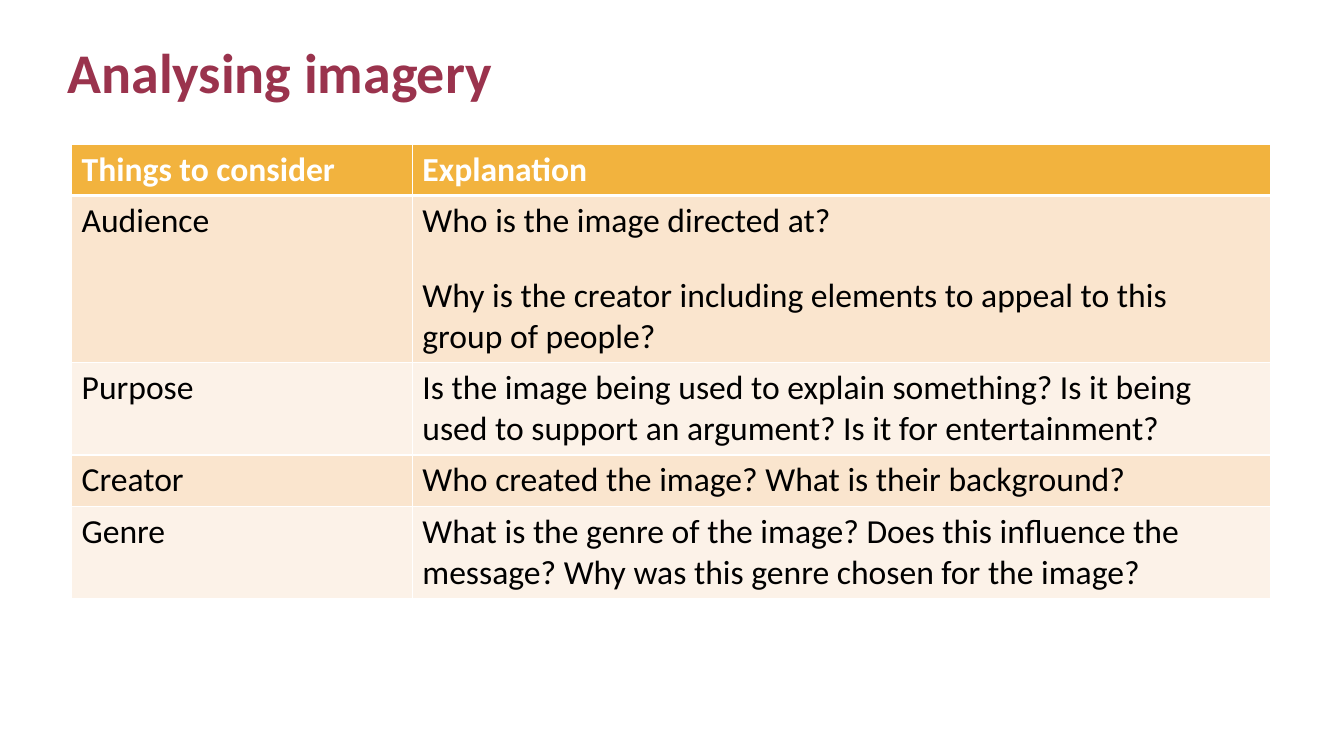
from dataclasses import dataclass

from lxml import etree
from pptx import Presentation
from pptx.dml.color import RGBColor
from pptx.enum.text import MSO_ANCHOR, MSO_AUTO_SIZE, PP_ALIGN
from pptx.oxml.ns import qn
from pptx.table import _Cell
from pptx.text.text import TextFrame
from pptx.util import Inches, Pt

TOP = MSO_ANCHOR.TOP
NO_AUTOFIT = MSO_AUTO_SIZE.NONE
LEFT = PP_ALIGN.LEFT
TITLE_ONLY = 5
FONT = "Calibri"
WHITE, BLACK, CRIMSON, AMBER = "FFFFFF", "000000", "9A334D", "F2B33E"
BANDS = ("FAE5CE", "FCF2E8")
COLUMN_WIDTHS = (3.38, 8.51)


@dataclass(frozen=True)
class Consideration:
    topic: str
    explanation: tuple[str, ...]
    height: float


HEADER = Consideration("Things to consider", ("Explanation",), 0.51)
CONSIDERATIONS = (
    Consideration("Audience", (
        "Who is the image directed at?",
        "Why is the creator including elements to appeal to this\vgroup of people?",
    ), 1.65),
    Consideration("Purpose", (
        "Is the image being used to explain something? Is it being used to "
        "support an argument? Is it for entertainment?",
    ), 0.92),
    Consideration("Creator", ("Who created the image? What is their background?",), 0.51),
    Consideration("Genre", (
        "What is the genre of the image? Does this influence the message? "
        "Why was this genre chosen for the image?",
    ), 0.92),
)


def rgb(value: str) -> RGBColor:
    return RGBColor.from_string(value)


def write(frame: TextFrame, *texts: str, size: float = 24, color: str = BLACK,
          bold: bool = False, gap: float = 24, line_spacing: float = 1.0) -> None:
    frame.word_wrap = True
    for index, text in enumerate(texts):
        paragraph = frame.add_paragraph() if index else frame.paragraphs[0]
        paragraph.text = text
        paragraph.alignment = LEFT
        paragraph.line_spacing = line_spacing
        paragraph.space_before = Pt(gap if index else 0)
        for run in paragraph.runs:
            run.font.name = FONT
            run.font.size = Pt(size)
            run.font.bold = bold
            run.font.color.rgb = rgb(color)


def add_borders(cell: _Cell, top: float, bottom: float) -> None:
    properties = cell._tc.get_or_add_tcPr()
    for side, width in (("L", 1), ("R", 1), ("T", top), ("B", bottom)):
        border = etree.SubElement(properties, qn(f"a:ln{side}"), w=str(Pt(width)))
        fill = etree.SubElement(border, qn("a:solidFill"))
        etree.SubElement(fill, qn("a:srgbClr"), val=WHITE)


def fill_cell(cell: _Cell, row: int, texts: tuple[str, ...]) -> None:
    is_header = row == 0
    add_borders(cell, top=3 if row == 1 else 1, bottom=3 if is_header else 1)
    cell.fill.solid()
    cell.fill.fore_color.rgb = rgb(AMBER if is_header else BANDS[(row - 1) % 2])
    write(cell.text_frame, *texts, color=WHITE if is_header else BLACK, bold=is_header)


def main() -> None:
    """Build the slide on analysing imagery and save it."""
    presentation = Presentation()
    presentation.slide_width = Inches(13.33)
    presentation.slide_height = Inches(7.5)
    slide = presentation.slides.add_slide(presentation.slide_layouts[TITLE_ONLY])

    title = slide.shapes.title
    title.left, title.top = Inches(0.57), Inches(0.4)
    title.width, title.height = Inches(11.5), Inches(1.45)
    title.text_frame.auto_size = NO_AUTOFIT
    title.text_frame.vertical_anchor = TOP
    write(title.text_frame, "Analysing imagery", size=40, color=CRIMSON,
          bold=True, line_spacing=0.9)

    rows = (HEADER, *CONSIDERATIONS)
    table = slide.shapes.add_table(
        len(rows), len(COLUMN_WIDTHS), Inches(0.71), Inches(1.43),
        Inches(sum(COLUMN_WIDTHS)), Inches(sum(row.height for row in rows)),
    ).table
    for column, width in zip(table.columns, COLUMN_WIDTHS):
        column.width = Inches(width)
    for index, consideration in enumerate(rows):
        table.rows[index].height = Inches(consideration.height)
        fill_cell(table.cell(index, 0), index, (consideration.topic,))
        fill_cell(table.cell(index, 1), index, consideration.explanation)

    presentation.save("out.pptx")


if __name__ == "__main__":
    main()
